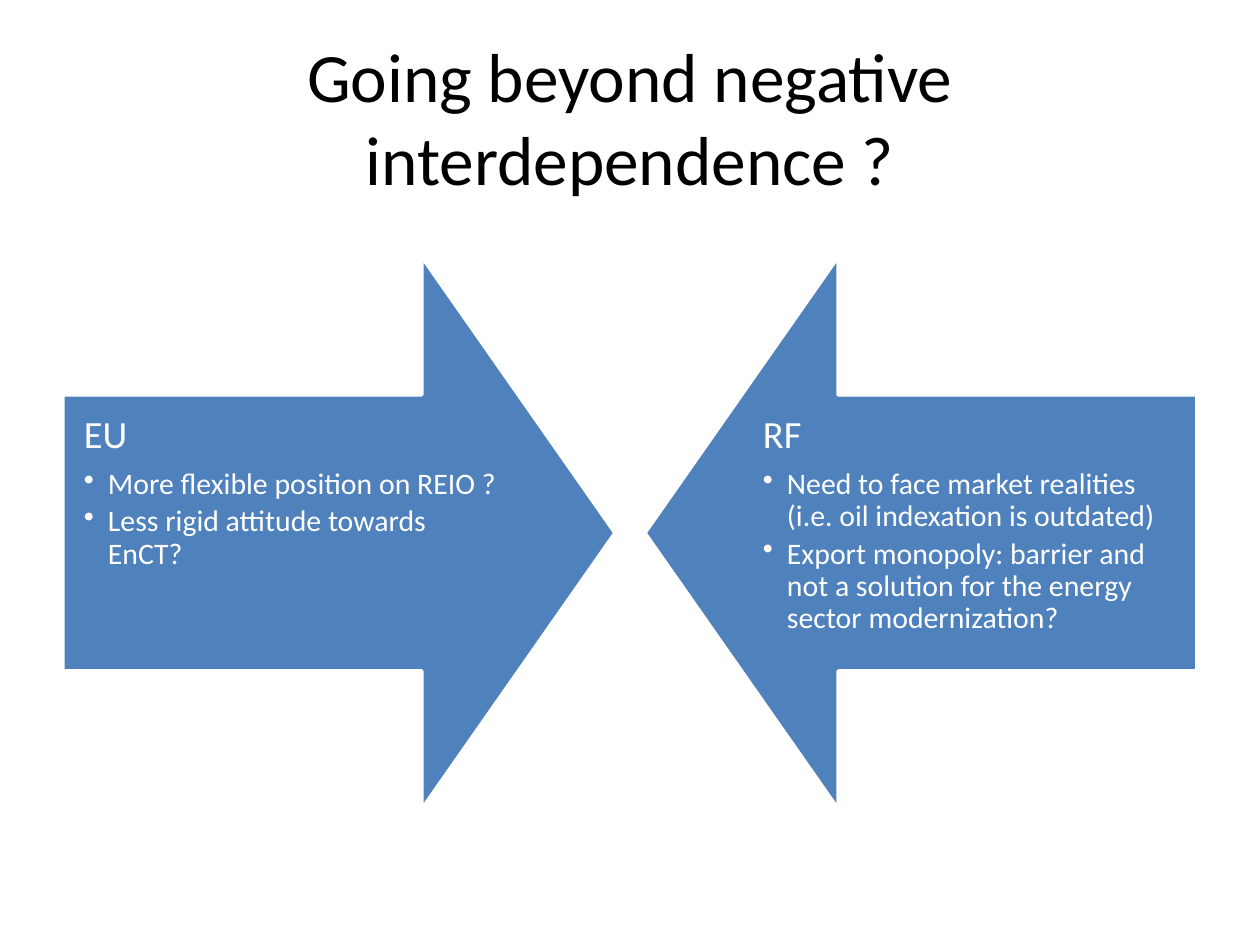
from lxml import etree
from pptx import Presentation
from pptx.dml.color import RGBColor
from pptx.enum.shapes import MSO_SHAPE
from pptx.enum.text import MSO_ANCHOR, MSO_AUTO_SIZE, PP_ALIGN
from pptx.oxml.ns import qn
from pptx.util import Pt

DOWN_ARROW = MSO_SHAPE.DOWN_ARROW
MIDDLE, TOP = MSO_ANCHOR.MIDDLE, MSO_ANCHOR.TOP
CENTER, LEFT = PP_ALIGN.CENTER, PP_ALIGN.LEFT
NO_AUTOFIT = MSO_AUTO_SIZE.NONE

PX = 914400 / 126
WIDTH, HEIGHT = 1260, 945
MARGIN = 63
ARROW_SIZE, ARROW_TOP = 552, 257
TEXT_WIDTH, TEXT_HEIGHT, TEXT_TOP = 455, 276, 394
TEXT_INSET, BULLET_INDENT = 21, 24


def px(*lengths):
    return [round(length * PX) for length in lengths]


def format_paragraph(paragraph, size, color, align):
    paragraph.alignment = align
    for run in paragraph.runs:
        run.font.name = "Calibri"
        run.font.size = Pt(size)
        run.font.color.rgb = RGBColor.from_string(color)


prs = Presentation()
prs.slide_width, prs.slide_height = px(WIDTH, HEIGHT)
slide = prs.slides.add_slide(prs.slide_layouts[5])

# Title
title = slide.shapes.title
title.left, title.top, title.width, title.height = px(
    MARGIN, 38, WIDTH - 2 * MARGIN, 157)
title.text_frame.text = "Going beyond negative interdependence ?"
title.text_frame.vertical_anchor = MIDDLE
title.text_frame.word_wrap = True
title.text_frame.auto_size = NO_AUTOFIT
format_paragraph(title.text_frame.paragraphs[0], 39.6, "000000", CENTER)

# Opposing arrows: party, rotation, arrow left, text left, points
right_edge = WIDTH - MARGIN
parties = [
    ("EU", 270, MARGIN, MARGIN,
     ["More flexible position on REIO ?",
      "Less rigid attitude towards EnCT?"]),
    ("RF", 90, right_edge - ARROW_SIZE, right_edge - TEXT_WIDTH,
     ["Need to face market realities (i.e. oil indexation is outdated)",
      "Export monopoly: barrier and not a solution for the energy sector "
      "modernization?"]),
]

for party, rotation, arrow_left, text_left, points in parties:
    arrow = slide.shapes.add_shape(
        DOWN_ARROW, *px(arrow_left, ARROW_TOP, ARROW_SIZE, ARROW_SIZE))
    arrow.rotation = rotation
    arrow.adjustments[0] = 0.5
    arrow.adjustments[1] = 0.35
    arrow.shadow.inherit = False
    arrow.fill.solid()
    arrow.fill.fore_color.rgb = RGBColor.from_string("4F81BD")
    arrow.line.color.rgb = RGBColor.from_string("FFFFFF")
    arrow.line.width = Pt(2)

    # Party name and its points
    position = slide.shapes.add_textbox(
        *px(text_left, TEXT_TOP, TEXT_WIDTH, TEXT_HEIGHT)).text_frame
    position.word_wrap = True
    position.auto_size = NO_AUTOFIT
    position.vertical_anchor = TOP
    (position.margin_left, position.margin_top,
     position.margin_right, position.margin_bottom) = px(*[TEXT_INSET] * 4)

    heading = position.paragraphs[0]
    heading.text = party
    heading.line_spacing = 0.9
    heading.space_after = Pt(7)
    format_paragraph(heading, 22, "FFFFFF", LEFT)

    for point in points:
        bullet = position.add_paragraph()
        bullet.text = point
        bullet.level = 1
        bullet.line_spacing = 0.9
        bullet.space_after = Pt(3)
        format_paragraph(bullet, 17, "FFFFFF", LEFT)
        properties = bullet._p.get_or_add_pPr()
        indent = px(BULLET_INDENT)[0]
        properties.set("marL", str(indent))
        properties.set("indent", str(-indent))
        etree.SubElement(properties, qn("a:buChar")).set("char", "•")

prs.save("out.pptx")
